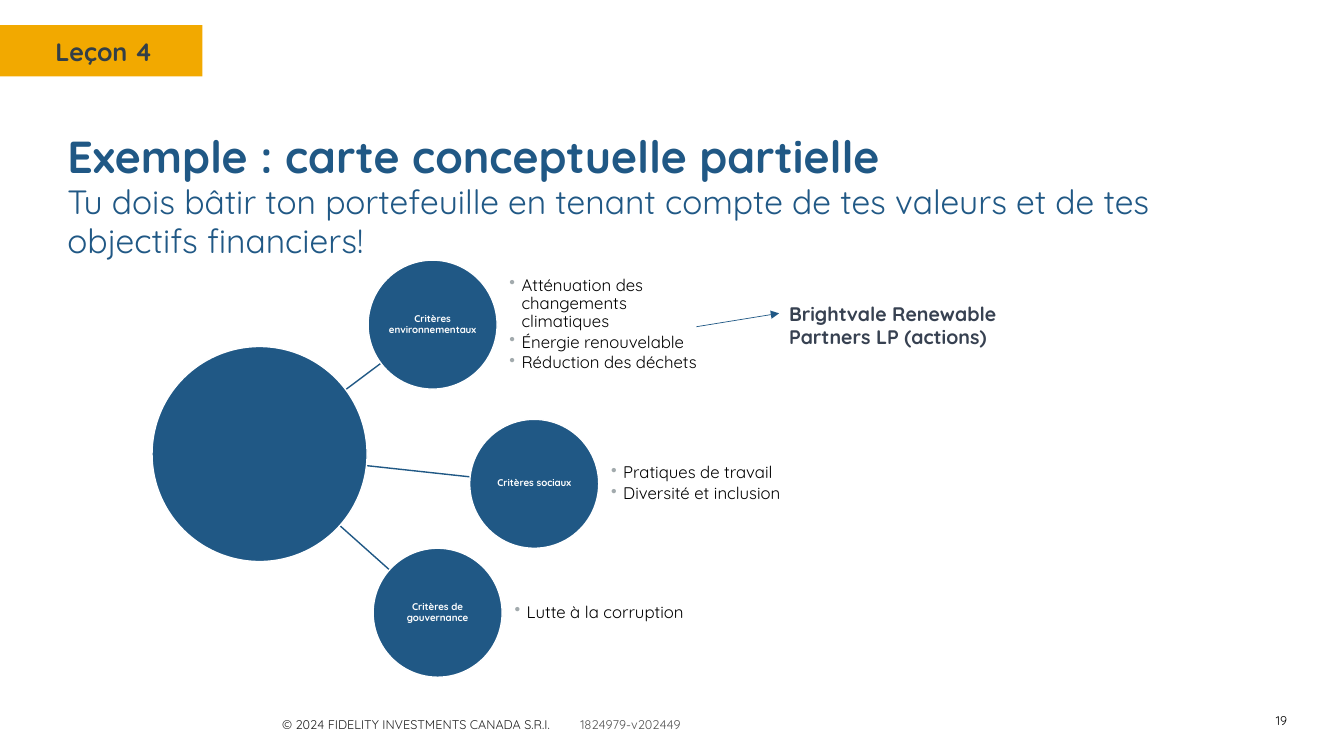
from dataclasses import dataclass
from math import hypot

from lxml.etree import SubElement
from pptx import Presentation
from pptx.dml.color import RGBColor
from pptx.enum.shapes import MSO_CONNECTOR as Link, MSO_SHAPE as Preset
from pptx.enum.text import MSO_ANCHOR as Anchor, PP_ALIGN as Align
from pptx.oxml.ns import qn
from pptx.util import Inches, Pt

COLUMNS, ROWS = 160, 90
CELL = Inches(7.5) / ROWS
FONT = "Quicksand"
COLORS = {
    "blue": "205885", "amber": "F2A900", "slate": "333F48", "ink": "374151",
    "dark": "222222", "grey": "545454", "bullet": "A2AAAD",
    "black": "000000", "white": "FFFFFF",
}


@dataclass(frozen=True)
class Area:
    column: float
    row: float
    columns: float
    rows: float

    def lengths(self) -> list[int]:
        return [cells(n) for n in (self.column, self.row, self.columns, self.rows)]


@dataclass(frozen=True)
class Disc:
    column: float
    row: float
    diameter: float

    def area(self) -> Area:
        radius = self.diameter / 2
        return Area(self.column - radius, self.row - radius, self.diameter, self.diameter)


@dataclass(frozen=True)
class Criterion:
    label: str
    disc: Disc
    points: tuple[str, ...]


HUB = Disc(30.9, 54.05, 25.6)
SPOKE_START = 39.8
CRITERIA = (
    Criterion("Critères environnementaux", Disc(51.5, 38.65, 15.36),
              ("Atténuation des changements climatiques", "Énergie renouvelable",
               "Réduction des déchets")),
    Criterion("Critères sociaux", Disc(63.6, 57.6, 15.36),
              ("Pratiques de travail", "Diversité et inclusion")),
    Criterion("Critères de gouvernance", Disc(52.1, 72.95, 15.36),
              ("Lutte à la corruption",)),
)


def cells(count: float) -> int:
    return round(count * CELL)


def rgb(name: str) -> RGBColor:
    return RGBColor.from_string(COLORS[name])


def add_span(para, text: str, size: float, color: str, bold: bool = False) -> None:
    span = para.add_run()
    span.text = text
    span.font.name = FONT
    span.font.size = Pt(size)
    span.font.bold = bold
    span.font.color.rgb = rgb(color)


def prepare_frame(box, anchor=Anchor.TOP, inset: bool = True):
    frame = box.text_frame
    frame.word_wrap = True
    frame.vertical_anchor = anchor
    if not inset:
        frame.margin_left = frame.margin_right = 0
        frame.margin_top = frame.margin_bottom = 0
    return frame


def add_text(page, area: Area, text: str, *, size: float, color: str,
             bold: bool = False, align=Align.LEFT, anchor=Anchor.TOP):
    box = page.shapes.add_textbox(*area.lengths())
    para = prepare_frame(box, anchor).paragraphs[0]
    para.alignment = align
    add_span(para, text, size, color, bold)
    return para


def add_block(page, preset, area: Area, fill: str, line: str | None = None):
    block = page.shapes.add_shape(preset, *area.lengths())
    block.shadow.inherit = False
    block.fill.solid()
    block.fill.fore_color.rgb = rgb(fill)
    if line:
        block.line.color.rgb = rgb(line)
        block.line.width = Pt(1)
    else:
        block.line.fill.background()
    return block


def add_line(page, start: tuple[float, float], end: tuple[float, float],
             width: float, arrow: bool = False) -> None:
    link = page.shapes.add_connector(
        Link.STRAIGHT, *(cells(n) for n in (*start, *end)))
    link.line.color.rgb = rgb("blue")
    link.line.width = Pt(width)
    if arrow:
        SubElement(link.line._get_or_add_ln(), qn("a:tailEnd"), type="triangle")
    SubElement(link._element.spPr, qn("a:effectLst"))


def add_spoke(page, disc: Disc) -> None:
    across, down = disc.column - HUB.column, disc.row - HUB.row
    share = disc.diameter / 2 / hypot(across, down)
    start = (SPOKE_START, HUB.row + (SPOKE_START - HUB.column) * down / across)
    add_line(page, start, (disc.column - across * share, disc.row - down * share), 1)


def add_bullet(para) -> None:
    props = para._p.get_or_add_pPr()
    props.set("marL", str(Inches(0.12)))
    props.set("indent", str(-Inches(0.12)))
    tint = SubElement(props, qn("a:buClr"))
    SubElement(tint, qn("a:srgbClr"), val=COLORS["bullet"])
    SubElement(props, qn("a:buChar"), char="•")


def add_criterion(page, criterion: Criterion) -> None:
    disc = criterion.disc
    circle = add_block(page, Preset.OVAL, disc.area(), "blue", "white")
    label = prepare_frame(circle, Anchor.MIDDLE, inset=False).paragraphs[0]
    label.alignment = Align.CENTER
    label.line_spacing = 0.9
    add_span(label, criterion.label, 7, "white", bold=True)

    area = Area(disc.column + 9.15, disc.area().row, 23.04, disc.diameter)
    box = page.shapes.add_textbox(*area.lengths())
    frame = prepare_frame(box, Anchor.MIDDLE, inset=False)
    for index, point in enumerate(criterion.points):
        para = frame.add_paragraph() if index else frame.paragraphs[0]
        add_bullet(para)
        para.line_spacing = 0.9
        para.space_after = Pt(1.8)
        add_span(para, point, 12, "black")


def add_footer(page) -> None:
    para = add_text(page, Area(32.4, 84.7, 52, 3),
                    "© 2024 FIDELITY INVESTMENTS CANADA S.R.I.\t", size=9, color="dark")
    stops = SubElement(para._p.get_or_add_pPr(), qn("a:tabLst"))
    SubElement(stops, qn("a:tab"), pos=str(cells(35.5)), algn="l")
    add_span(para, "1824979-v202449", 9, "grey")
    add_text(page, Area(146, 84.7, 8.4, 2.2), "19", size=9, color="black",
             align=Align.RIGHT, anchor=Anchor.MIDDLE)


def main() -> None:
    deck = Presentation()
    deck.slide_width, deck.slide_height = cells(COLUMNS), cells(ROWS)
    page = deck.slides.add_slide(deck.slide_layouts[6])

    add_block(page, Preset.RECTANGLE, Area(0, 3, 24.1, 6.1), "amber")
    add_text(page, Area(5.4, 3.7, 15.7, 4.8), "Leçon 4",
             size=18, color="slate", bold=True)
    add_footer(page)

    title = add_text(page, Area(6.85, 15.25, 146.4, 6.7),
                     "Exemple : carte conceptuelle partielle",
                     size=32, color="blue", bold=True)
    title.line_spacing = 0.95
    title.add_line_break()
    add_span(title, "Tu dois bâtir ton portefeuille en tenant compte de tes valeurs "
                    "et de tes objectifs financiers!", 24, "blue")

    for criterion in CRITERIA:
        add_spoke(page, criterion.disc)
    add_block(page, Preset.OVAL, HUB.area(), "blue", "white")
    for criterion in CRITERIA:
        add_criterion(page, criterion)

    add_line(page, (82.9, 38.9), (92.75, 37.3), 0.5, arrow=True)
    add_text(page, Area(92.75, 35.3, 32.3, 9.8),
             "Brightvale Renewable Partners LP (actions)",
             size=14, color="ink", bold=True)
    deck.save("out.pptx")


if __name__ == "__main__":
    main()
